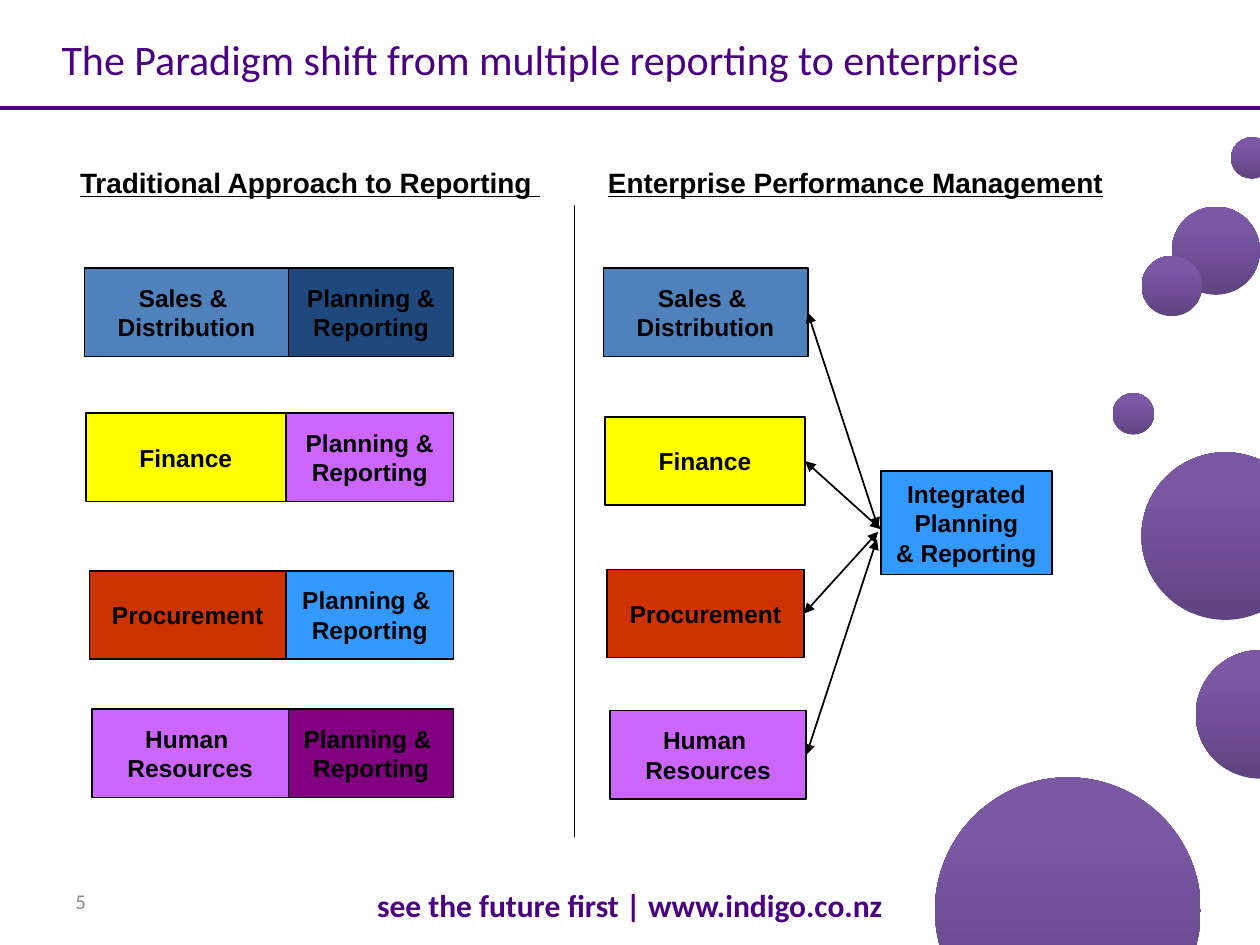
from copy import deepcopy

from pptx import Presentation
from pptx.dml.color import RGBColor
from pptx.enum.shapes import MSO_CONNECTOR, MSO_SHAPE
from pptx.enum.text import MSO_ANCHOR, PP_ALIGN
from pptx.oxml.ns import qn
from pptx.oxml.xmlchemy import OxmlElement
from pptx.util import Pt

PX = 9144  # 100 px to the inch
INDIGO, BLACK = "4B0082", "000000"
BLUE, YELLOW, RED, VIOLET, SKY = "4F81BD", "FFFF00", "CC3300", "CC66FF", "3399FF"
rgb = RGBColor.from_string


def write(sp, text, size, font="Arial", color=BLACK, bold=True,
          align=PP_ALIGN.CENTER, wrap=False, underline=None):
    """Fill a shape with middle-anchored text, one paragraph per line."""
    tf = sp.text_frame
    tf.word_wrap = wrap
    tf.vertical_anchor = MSO_ANCHOR.MIDDLE
    tf.text = text
    for p in tf.paragraphs:
        p.alignment = align
        f = p.font
        f.name, f.size, f.bold, f.underline = font, Pt(size), bold, underline
        f.color.rgb = rgb(color)


def add_box(x, y, w, h, color, text):
    sp = s.shapes.add_shape(MSO_SHAPE.RECTANGLE, x * PX, y * PX, w * PX, h * PX)
    sp.shadow.inherit = False
    sp.fill.solid()
    sp.fill.fore_color.rgb = rgb(color)
    sp.line.color.rgb = rgb(BLACK)
    sp.line.width = Pt(1)
    write(sp, text, 14)
    return sp


prs = Presentation()
prs.slide_width, prs.slide_height = 1000 * PX, 750 * PX
s = prs.slides.add_slide(prs.slide_layouts[6])

# Bubbles: left, top, diameter
for x, y, d in [(906, 359, 133), (742, 617, 211), (930, 164, 70), (906, 203, 48),
                (949, 516, 102), (883, 312, 33), (977, 109, 33)]:
    sp = s.shapes.add_shape(MSO_SHAPE.OVAL, x * PX, y * PX, d * PX, d * PX)
    sp.shadow.inherit = False
    sp.line.fill.background()
    sp.fill.gradient()
    sp.fill.gradient_angle = 90
    stops = sp._element.spPr.find(".//" + qn("a:gsLst"))
    stops.append(deepcopy(stops[0]))
    for stop, (pos, color) in zip(sp.fill.gradient_stops,
                                  [(0, "5F4480"), (0.8, "7B58A6"), (1, "7C57A8")]):
        stop.position = pos
        stop.color.rgb = rgb(color)

# Title, footer, page number and column headings
heading = dict(size=16, underline=True)
plain = dict(font="Calibri", bold=False, align=PP_ALIGN.LEFT, wrap=True)
for x, y, w, h, text, style in [
    (0, 695, 1000, 47, "see the future first | www.indigo.co.nz",
     dict(size=18, font="Calibri", color=INDIGO, wrap=True)),
    (50, 695, 233, 40, "5", dict(plain, size=12, color="8C8C8C")),
    (39, 0, 800, 94, "The Paradigm shift from multiple reporting to enterprise",
     dict(plain, size=24, color=INDIGO)),
    (51, 126, 390, 37, "Traditional Approach to Reporting ", heading),
    (470, 126, 418, 37, "Enterprise Performance Management", heading),
]:
    write(s.shapes.add_textbox(x * PX, y * PX, w * PX, h * PX), text, **style)

# Each department with its own reporting on the left, alone on the right
SALES, HR = "Sales & \nDistribution", "Human \nResources"
PLAN, PLAN_SPACED = "Planning &\nReporting", "Planning & \nReporting"
departments = []
for text, color, w, x, y, plan, plan_color, right_x, right_y in [
    (SALES, BLUE, 162, 67, 213, PLAN, "1F497D", 479, 213),
    ("Finance", YELLOW, 159, 68, 328, PLAN, VIOLET, 480, 331),
    ("Procurement", RED, 156, 71, 453, PLAN_SPACED, SKY, 482, 452),
    (HR, VIOLET, 156, 73, 563, PLAN_SPACED, "800080", 484, 564),
]:
    add_box(x, y, w, 70, color, text)
    add_box(x + w, y, 360 - x - w, 70, plan_color, plan)
    departments.append(add_box(right_x, right_y, w, 70, color, text))

add_box(699, 374, 136, 82, SKY, "Integrated\nPlanning\n& Reporting")

# Rule, divider, and the arrows leaving each department's right side
sales, finance, procurement, hr = departments
for x1, y1, x2, y2, color, width, source in [
    (1000, 86, -23, 86, INDIGO, 2.25, None),
    (456, 163, 456, 664, BLACK, 1, None),
    (641, 248, 697, 419, BLACK, 1, sales),
    (639, 366, 699, 420, BLACK, 1, finance),
    (638, 487, 697, 422, BLACK, 1, procurement),
    (640, 599, 696, 428, BLACK, 1, hr),
]:
    line = s.shapes.add_connector(MSO_CONNECTOR.STRAIGHT,
                                  x1 * PX, y1 * PX, x2 * PX, y2 * PX)
    line.line.color.rgb = rgb(color)
    line.line.width = Pt(width)
    line._element.spPr.append(OxmlElement("a:effectLst"))
    if source:
        line.begin_connect(source, 3)
        for tag in ("a:headEnd", "a:tailEnd"):
            end = OxmlElement(tag)
            end.set("type", "triangle")
            line.line._get_or_add_ln().append(end)

prs.save("out.pptx")
